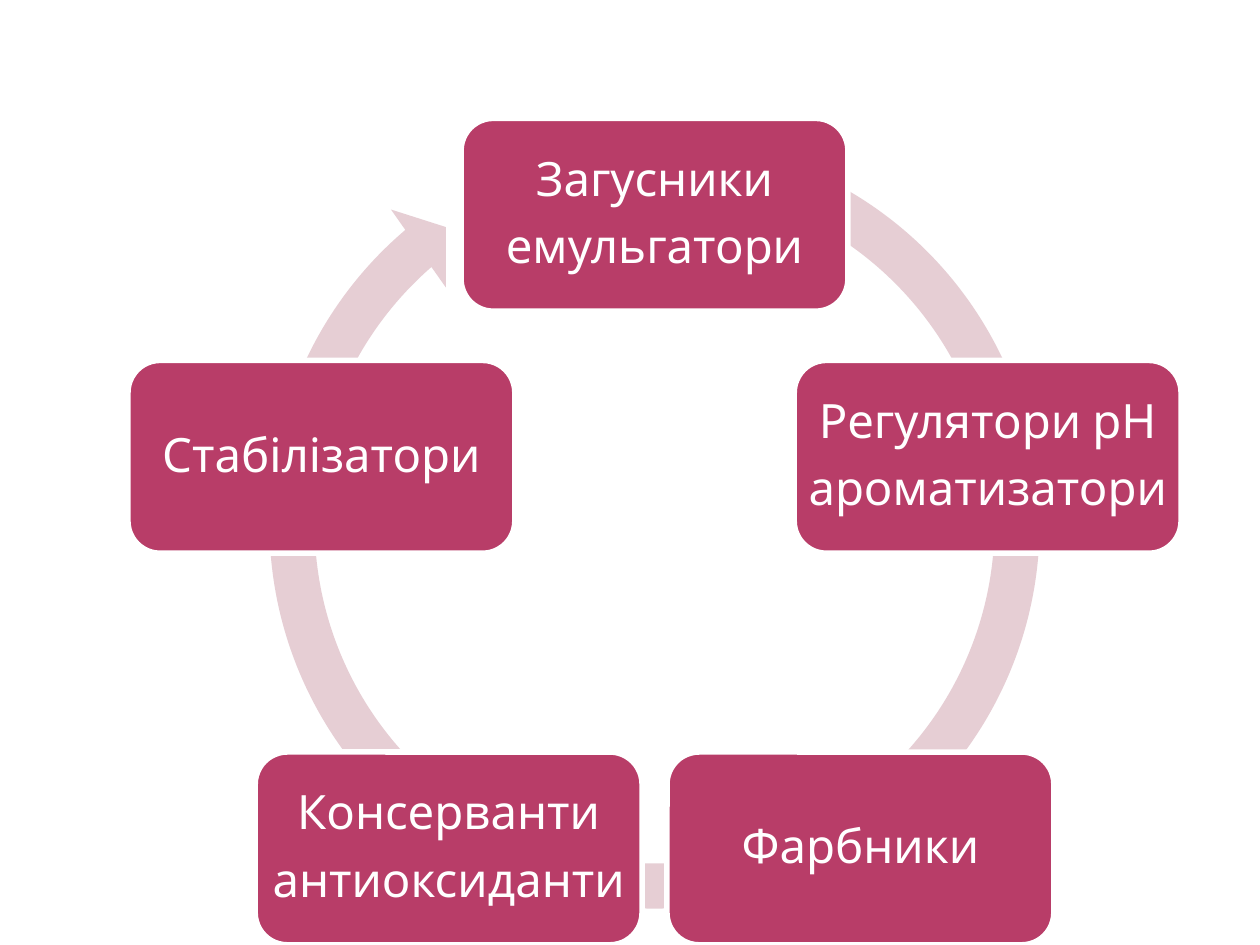
from dataclasses import dataclass
from math import cos, radians, sin

from lxml.etree import SubElement
from pptx import Presentation
from pptx.dml.color import RGBColor
from pptx.enum.shapes import MSO_SHAPE
from pptx.enum.text import MSO_ANCHOR, PP_ALIGN
from pptx.oxml.ns import qn
from pptx.util import Inches, Pt


@dataclass(frozen=True)
class Theme:
    box: RGBColor = RGBColor.from_string("B83D68")
    arrow: RGBColor = RGBColor.from_string("E6CED4")
    white: RGBColor = RGBColor.from_string("FFFFFF")
    font: str = "Karla"
    size: int = 27
    outline: float = 3.15


THEME = Theme()
ADDITIVES = [
    ["Загусники", "емульгатори"],
    ["Регулятори рН", "ароматизатори"],
    ["Фарбники"],
    ["Консерванти", "антиоксиданти"],
    ["Стабілізатори"],
]


def write_text(tf, lines, *, font, size, color, line_spacing, after_percent):
    for i, line in enumerate(lines):
        p = tf.paragraphs[0] if i == 0 else tf.add_paragraph()
        p.alignment = PP_ALIGN.CENTER
        p.line_spacing = line_spacing
        after = SubElement(p._p.get_or_add_pPr(), qn("a:spcAft"))
        SubElement(after, qn("a:spcPct")).set("val", str(after_percent * 1000))
        r = p.add_run()
        r.text = line
        r.font.name = font
        r.font.size = Pt(size)
        r.font.color.rgb = color


def add_filled(s, kind, box, fill):
    sp = s.shapes.add_shape(kind, *(Inches(v) for v in box))
    sp.shadow.inherit = False
    sp.fill.solid()
    sp.fill.fore_color.rgb = fill
    return sp


def add_ring_arrow(s, box):
    sp = add_filled(s, MSO_SHAPE.CIRCULAR_ARROW, box, THEME.arrow)
    sp.line.fill.background()
    head, end, start = (degrees * 0.6 for degrees in (5.51, 229.35, 289.91))
    for i, value in enumerate((5.5 / 100, head, end, start, 5.8 / 100)):
        sp.adjustments[i] = value


def add_step(s, box, lines):
    sp = add_filled(s, MSO_SHAPE.ROUNDED_RECTANGLE, box, THEME.box)
    sp.line.color.rgb = THEME.white
    sp.line.width = Pt(THEME.outline)
    tf = sp.text_frame
    tf.word_wrap = True
    tf.vertical_anchor = MSO_ANCHOR.MIDDLE
    tf.margin_left = tf.margin_right = Inches(0.03)
    tf.margin_top = tf.margin_bottom = Inches(0.03)
    write_text(tf, lines, font=THEME.font, size=THEME.size, color=THEME.white,
               line_spacing=0.9, after_percent=35)


def add_cycle(s, box, steps):
    left, top, width, height = box
    step_w, step_h, radius = 3.07, 1.53, 2.78
    center_x, center_y = left + width / 2, top + step_h / 2 + radius
    ring = 6.51
    add_ring_arrow(s, (center_x - ring / 2, top - 0.04, ring, ring))
    for i, lines in enumerate(steps):
        angle = radians(i * 360 / len(steps))
        x = center_x + radius * sin(angle) - step_w / 2
        y = center_y - radius * cos(angle) - step_h / 2
        add_step(s, (x, y, step_w, step_h), lines)


def main():
    prs = Presentation()
    prs.slide_width, prs.slide_height = Inches(10), Inches(7.5)
    s = prs.slides.add_slide(prs.slide_layouts[6])
    add_cycle(s, (0.94, 0.94, 8.51, 6.55), ADDITIVES)
    prs.save("out.pptx")


if __name__ == "__main__":
    main()
